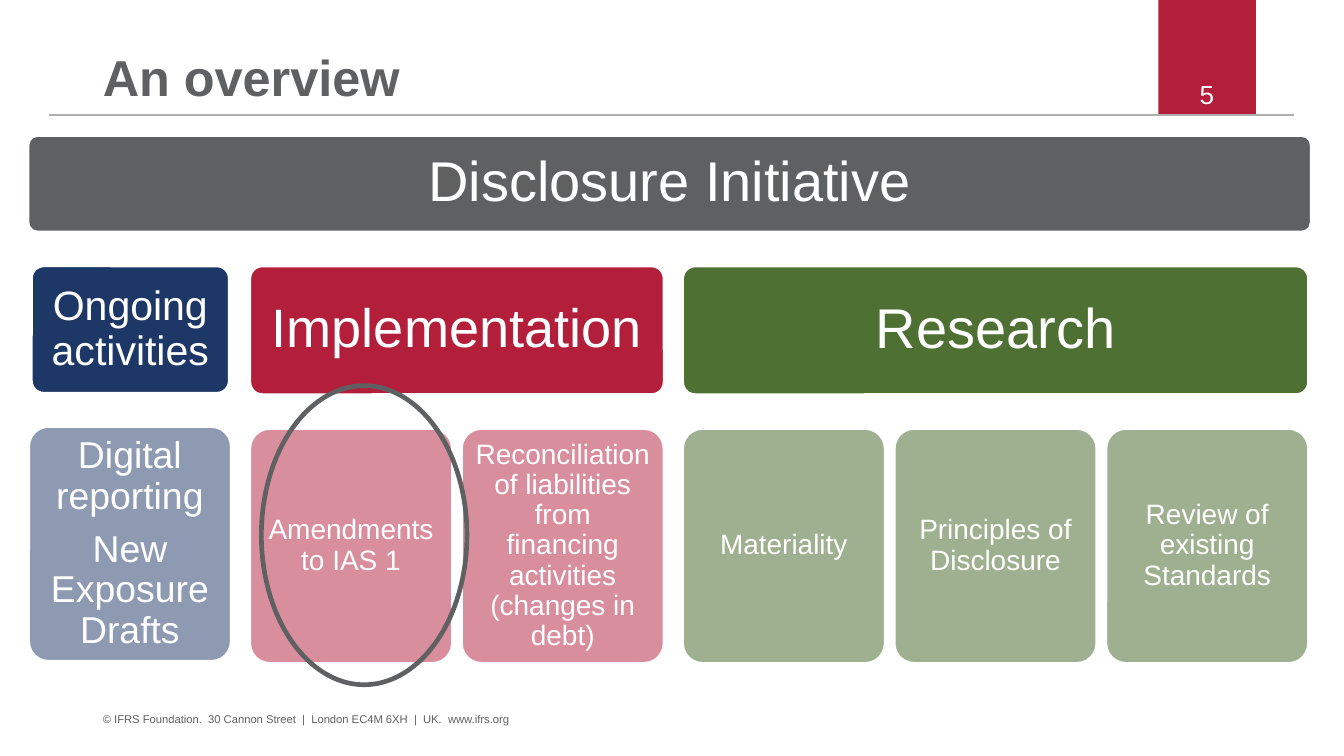
from pptx import Presentation
from pptx.dml.color import RGBColor
from pptx.enum.shapes import MSO_CONNECTOR, MSO_SHAPE
from pptx.enum.text import MSO_ANCHOR, MSO_AUTO_SIZE, PP_ALIGN
from pptx.oxml.ns import qn
from pptx.util import Pt
from lxml.etree import SubElement

PX = 4572
WHITE = RGBColor(0xFF, 0xFF, 0xFF)
GREY = RGBColor(0x5F, 0x60, 0x62)
RULE_GREY = RGBColor(0xAF, 0xAF, 0xB0)
RED = RGBColor(0xB3, 0x1E, 0x3B)
NAVY = RGBColor(0x1D, 0x37, 0x66)
GREEN = RGBColor(0x4F, 0x70, 0x33)


def write(frame, lines, size, color, align, inset=0, anchor=MSO_ANCHOR.TOP, spacing=1.0):
    frame.word_wrap = True
    frame.auto_size = MSO_AUTO_SIZE.NONE
    frame.vertical_anchor = anchor
    frame.margin_left = frame.margin_right = inset * PX
    frame.margin_top = frame.margin_bottom = inset * PX
    frame.text = "\n".join(lines)
    for index, paragraph in enumerate(frame.paragraphs):
        paragraph.alignment = align
        paragraph.line_spacing = spacing
        paragraph.space_before = Pt(7 if index else 0)
        for run in paragraph.runs:
            run.font.name = "Arial"
            run.font.size = Pt(size)
            run.font.color.rgb = color


def add_card(left, top, width, height, color, lines, size, inset, alpha=100):
    card = slide.shapes.add_shape(
        MSO_SHAPE.ROUNDED_RECTANGLE, left * PX, top * PX, width * PX, height * PX)
    card.adjustments[0] = 0.1
    card.shadow.inherit = False
    card.fill.solid()
    card.fill.fore_color.rgb = color
    if alpha < 100:
        tint = card._element.spPr.find(qn("a:solidFill"))[0]
        SubElement(tint, qn("a:alpha")).set("val", str(alpha * 1000))
    card.line.color.rgb = WHITE
    card.line.width = Pt(2)
    write(card.text_frame, lines, size, WHITE, PP_ALIGN.CENTER, inset, MSO_ANCHOR.MIDDLE, 0.9)


prs = Presentation()
prs.slide_width = 2000 * PX
prs.slide_height = 1125 * PX
slide = prs.slides.add_slide(prs.slide_layouts[5])

page_tab = slide.shapes.add_shape(MSO_SHAPE.RECTANGLE, 1724 * PX, 0, 145 * PX, 171 * PX)
page_tab.shadow.inherit = False
page_tab.fill.solid()
page_tab.fill.fore_color.rgb = RED
page_tab.line.fill.background()

header_rule = slide.shapes.add_connector(
    MSO_CONNECTOR.STRAIGHT, 73 * PX, 171 * PX, 1926 * PX, 171 * PX)
header_rule.line.color.rgb = RULE_GREY
header_rule.line.width = Pt(1.2)
SubElement(header_rule._element.spPr, qn("a:effectLst"))

title = slide.shapes.title
title.left, title.top, title.width, title.height = 153 * PX, 30 * PX, 1482 * PX, 130 * PX
write(title.text_frame, ["An overview"], 27, GREY, PP_ALIGN.LEFT, 0, MSO_ANCHOR.BOTTOM, 0.9)
title.text_frame.paragraphs[0].runs[0].font.bold = True

copyright_line = "© IFRS Foundation.  30 Cannon Street  |  London EC4M 6XH  |  UK.  www.ifrs.org"
for left, top, width, line, size, color, align in [
    (153, 1060, 1236, copyright_line, 6, GREY, PP_ALIGN.LEFT),
    (1727, 117, 138, "5", 14, WHITE, PP_ALIGN.CENTER),
]:
    box = slide.shapes.add_textbox(left * PX, top * PX, width * PX, 32 * PX)
    write(box.text_frame, [line], size, color, align)

add_card(41, 201, 1911, 145, GREY, ["Disclosure Initiative"], 30, 24)

add_card(46, 395, 296, 191, NAVY, ["Ongoing activities"], 22, 18)
add_card(42, 634, 303, 351, NAVY, ["Digital reporting", "New Exposure Drafts"], 20, 16, 50)

CARD_WIDTH = 303
CARD_STEP = 315
streams = [
    (371, RED, 50, "Implementation", 29, [
        "Amendments to IAS 1",
        "Reconciliation of liabilities from financing activities (changes in debt)",
    ]),
    (1015, GREEN, 55, "Research", 30, [
        "Materiality",
        "Principles of Disclosure",
        "Review of existing Standards",
    ]),
]
for left, color, alpha, stream, size, projects in streams:
    stream_width = CARD_STEP * (len(projects) - 1) + CARD_WIDTH
    add_card(left, 395, stream_width, 193, color, [stream], size, 24)
    for index, project in enumerate(projects):
        add_card(left + index * CARD_STEP, 637, CARD_WIDTH, 351, color, [project], 15, 12, alpha)

highlight = slide.shapes.add_shape(MSO_SHAPE.OVAL, 389 * PX, 574 * PX, 306 * PX, 445 * PX)
highlight.shadow.inherit = False
highlight.fill.background()
highlight.line.color.rgb = GREY
highlight.line.width = Pt(2.5)

prs.save("out.pptx")
